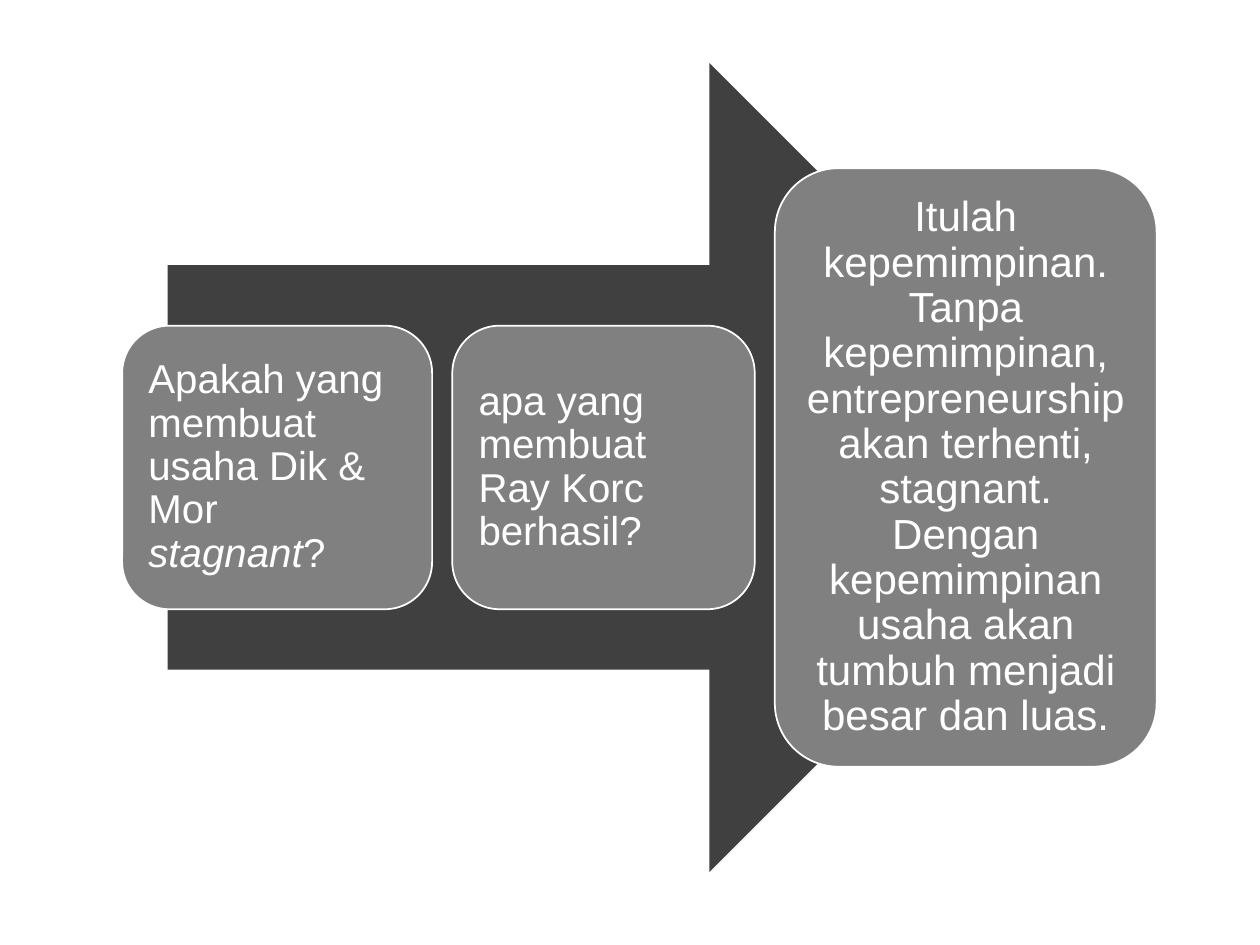
from pptx import Presentation, util as u
from pptx.dml.color import RGBColor
from pptx.enum import shapes, text

COLORS = {"arrow": "404040", "card": "808080", "light": "FFFFFF"}
FONT = "Arial"
LEFT, CENTER = text.PP_ALIGN.LEFT, text.PP_ALIGN.CENTER

# Content: (width, height, alignment, size, runs as (words, italic))
CARDS = [
    (2.46, 2.25, LEFT, 23, [("Apakah yang membuat usaha Dik & Mor ", False),
                            ("stagnant", True), ("?", False)]),
    (2.4, 2.25, LEFT, 23, [("apa yang membuat Ray Korc berhasil?", False)]),
    (3.03, 4.75, CENTER, 24, [("Itulah kepemimpinan. Tanpa kepemimpinan, "
                               "entrepreneurship akan terhenti, stagnant. "
                               "Dengan kepemimpinan usaha akan tumbuh menjadi "
                               "besar dan luas.", False)]),
]

# Layout: everything is centred on one horizontal axis
SLIDE_W, SLIDE_H = 10, 7.5
AXIS = 3.71
CARDS_LEFT, GAP = 0.97, 0.16
ARROW_LEFT, ARROW_W, ARROW_H = 1.33, 7.51, 6.42
INSET = u.Inches(0.1)


def color(name):
    return RGBColor.from_string(COLORS[name])


def add_on_axis(slide, kind, left, width, height, fill):
    shape = slide.shapes.add_shape(
        kind, u.Inches(left), u.Inches(AXIS - height / 2),
        u.Inches(width), u.Inches(height))
    shape.shadow.inherit = False
    shape.fill.solid()
    shape.fill.fore_color.rgb = color(fill)
    return shape


def write(card, align, size, runs):
    frame = card.text_frame
    frame.word_wrap = True
    frame.vertical_anchor = text.MSO_ANCHOR.MIDDLE
    frame.margin_left = frame.margin_right = INSET
    frame.margin_top = frame.margin_bottom = INSET
    paragraph = frame.paragraphs[0]
    paragraph.alignment = align
    paragraph.line_spacing = 0.9
    paragraph.font.name = FONT
    paragraph.font.size = u.Pt(size)
    paragraph.font.color.rgb = color("light")
    for words, italic in runs:
        run = paragraph.add_run()
        run.text = words
        if italic:
            run.font.italic = True


def main():
    deck = Presentation()
    deck.slide_width, deck.slide_height = u.Inches(SLIDE_W), u.Inches(SLIDE_H)
    slide = deck.slides.add_slide(deck.slide_layouts[6])

    # Arrow behind the cards
    arrow = add_on_axis(slide, shapes.MSO_SHAPE.RIGHT_ARROW,
                        ARROW_LEFT, ARROW_W, ARROW_H, "arrow")
    arrow.line.fill.background()

    # Cards from left to right
    left = CARDS_LEFT
    for width, height, align, size, runs in CARDS:
        card = add_on_axis(slide, shapes.MSO_SHAPE.ROUNDED_RECTANGLE,
                           left, width, height, "card")
        card.line.color.rgb = color("light")
        card.line.width = u.Pt(1)
        write(card, align, size, runs)
        left += width + GAP

    deck.save("out.pptx")


if __name__ == "__main__":
    main()
